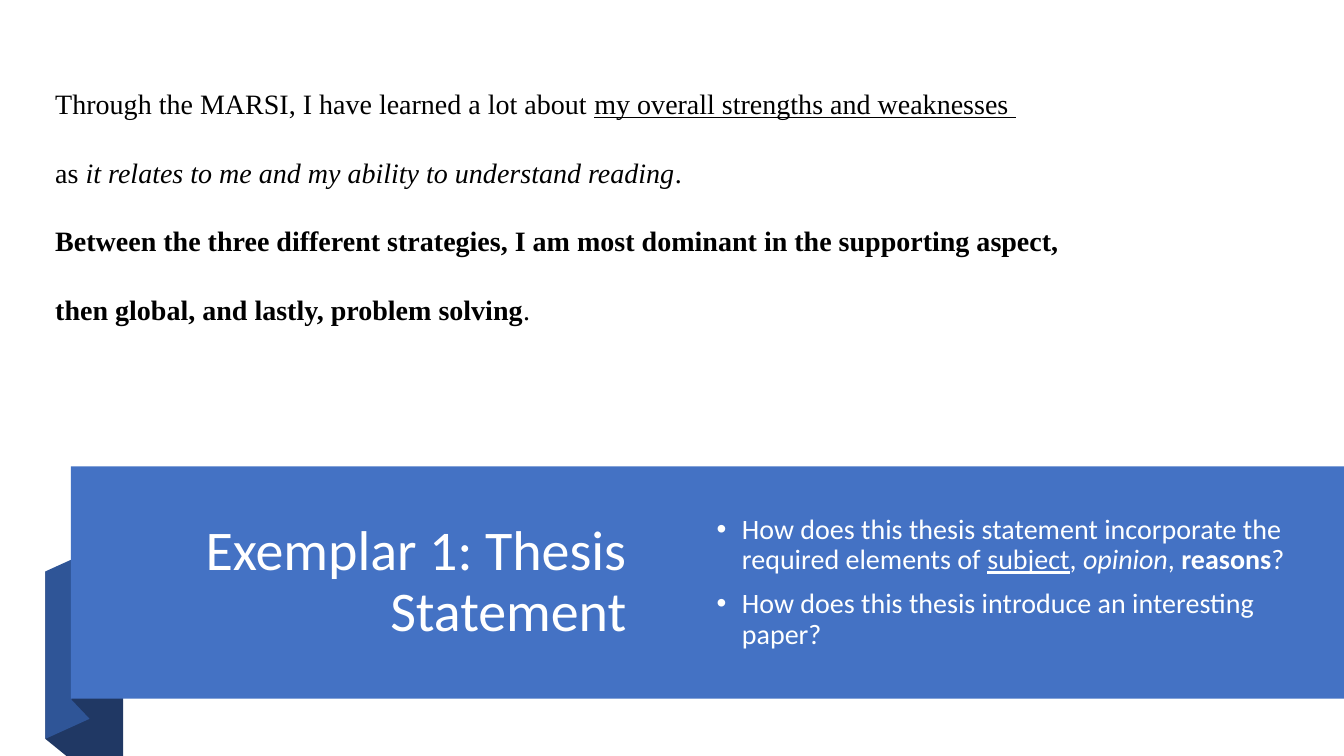
import pptx
import pptx.util
import pptx.dml.color
import pptx.enum.shapes
import pptx.enum.text
import lxml.etree

Pt = pptx.util.Pt
RGB = pptx.dml.color.RGBColor
ALIGN = pptx.enum.text.PP_ALIGN
ANCHOR = pptx.enum.text.MSO_ANCHOR

WHITE = RGB(0xFF, 0xFF, 0xFF)
SNOW = RGB(0xFE, 0xFF, 0xFF)
BLACK = RGB(0x00, 0x00, 0x00)
BLUE = RGB(0x44, 0x72, 0xC4)
DEEP = RGB(0x2F, 0x55, 0x97)
NAVY = RGB(0x20, 0x38, 0x64)

THESIS = [
    [("Through the MARSI, I have learned a lot about ", ""),
     ("my overall strengths and weaknesses ", "u")],
    [("as ", ""),
     ("it relates to me and my ability to understand reading", "i"), (".", "")],
    [("Between the three different strategies, I am most dominant "
      "in the supporting aspect,", "b")],
    [("then global, and lastly, problem solving", "b"), (".", "")],
]
TITLE = [[("Exemplar 1: Thesis Statement", "")]]
POINTS = [
    [("How does this thesis statement incorporate the required elements of ", ""),
     ("subject", "u"), (", ", ""), ("opinion", "i"), (", ", ""),
     ("reasons", "b"), ("?", "")],
    [("How does this thesis introduce an interesting paper?", "")],
]


def paint(shape, color):
    shape.shadow.inherit = False
    shape.fill.solid()
    shape.fill.fore_color.rgb = color
    shape.line.fill.background()


def mark(para, indent):
    """Give a paragraph a hanging bullet."""
    props = para._p.get_or_add_pPr()
    props.set("marL", str(Pt(indent)))
    props.set("indent", str(-Pt(indent)))
    tag = pptx.oxml.ns.qn
    lxml.etree.SubElement(props, tag("a:buFont")).set("typeface", "Arial")
    lxml.etree.SubElement(props, tag("a:buChar")).set("char", "•")


def write(slide, box, paras, font="Calibri", size=20, color=BLACK,
          align=ALIGN.LEFT, anchor=ANCHOR.TOP, line=1.0, gap=0, indent=0):
    """Place paragraphs of (text, style) runs; style is u, i, b or empty."""
    frame = slide.shapes.add_textbox(*map(Pt, box)).text_frame
    frame.word_wrap = True
    frame.vertical_anchor = anchor
    for n, runs in enumerate(paras):
        para = frame.add_paragraph() if n else frame.paragraphs[0]
        para.alignment = align
        para.line_spacing = line
        para.space_before = Pt(gap if n else 0)
        if indent:
            mark(para, indent)
        for text, style in runs:
            run = para.add_run()
            run.text = text
            run.font.name = font
            run.font.size = Pt(size)
            run.font.color.rgb = color
            run.font.underline = style == "u"
            run.font.italic = style == "i"
            run.font.bold = style == "b"


def ribbon(slide, box):
    """Draw the folded ribbon end from back to front."""
    left, top, wide, high = box
    bend = 31.7
    parts = [
        (NAVY, [(0, 30.2), (wide, 75.6), (wide, high), (15.1, high), (0, 149.8)]),
        (DEEP, [(bend, 135.4), (0, 149.8), (0, 30.2), (bend, 15.8)]),
        (NAVY, [(bend, 135.4), (18.7, 121.7), (18.7, 0), (bend, 13.7)]),
    ]
    for color, dots in parts:
        dots = [(Pt(left + x), Pt(top + y)) for x, y in dots]
        build = slide.shapes.build_freeform(*dots[0])
        build.add_line_segments(dots[1:], close=True)
        paint(build.convert_to_shape(), color)


def banner(slide, box):
    """Draw the band with its title and questions."""
    left, top, wide, high = box
    band = slide.shapes.add_shape(
        pptx.enum.shapes.MSO_SHAPE.RECTANGLE, *map(Pt, box))
    paint(band, BLUE)
    write(slide, (left + 50.4, top + 18, 353.5, high - 35.3), TITLE, size=40,
          color=WHITE, align=ALIGN.RIGHT, anchor=ANCHOR.MIDDLE, line=0.9)
    write(slide, (left + 454.3, top + 20.2, 422.6, high - 40.3), POINTS,
          color=SNOW, anchor=ANCHOR.MIDDLE, line=0.9, gap=10, indent=18)


def thesis(slide, box):
    """Place the sample thesis statement."""
    write(slide, box, THESIS, font="Times New Roman", gap=25)


def main():
    deck = pptx.Presentation()
    deck.slide_width, deck.slide_height = Pt(960), Pt(540)
    slide = deck.slides.add_slide(deck.slide_layouts[6])
    ribbon(slide, (32.4, 378, 55.5, 162))
    banner(slide, (50.6, 333.2, 909.4, 165.8))
    thesis(slide, (32.4, 58.3, 895, 198.7))
    deck.save("out.pptx")


if __name__ == "__main__":
    main()
